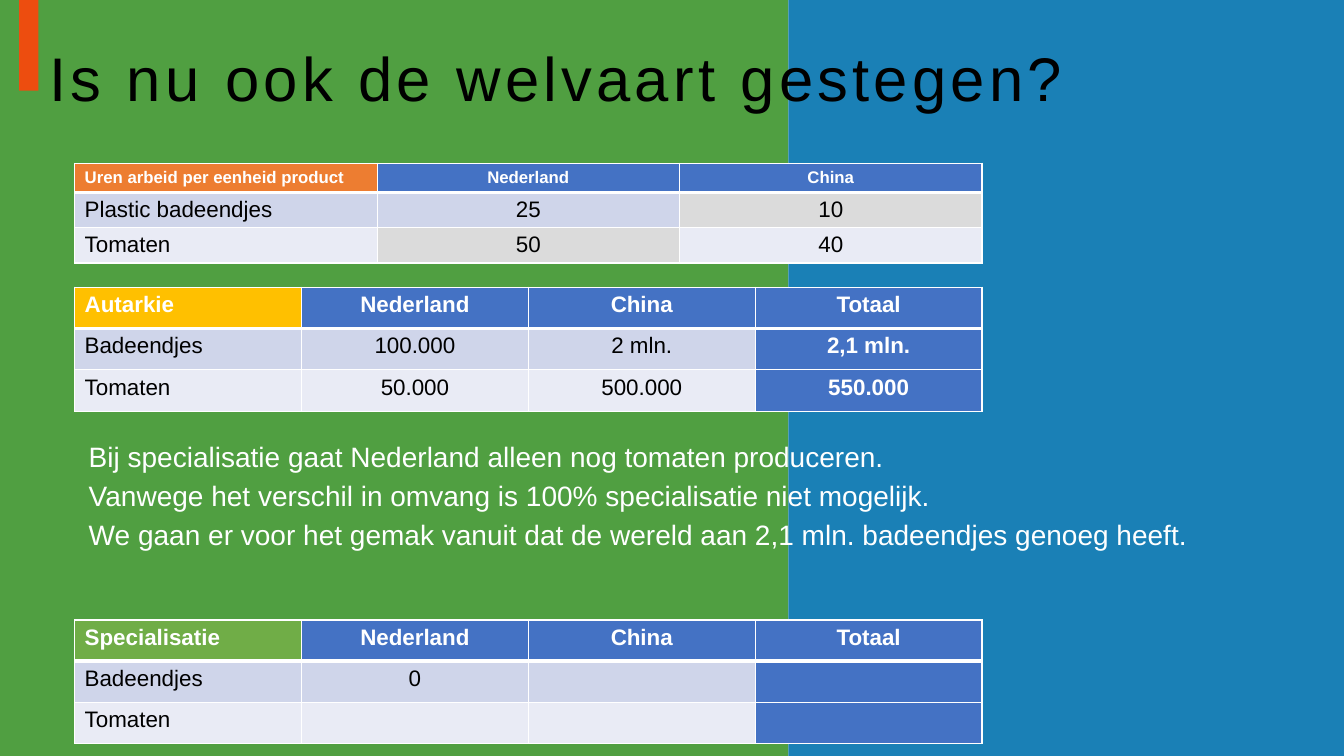
from dataclasses import dataclass

from lxml.etree import SubElement
from pptx import Presentation
from pptx.dml.color import RGBColor
from pptx.enum.shapes import MSO_SHAPE as SHAPE
from pptx.enum.text import MSO_ANCHOR as ANCHOR, MSO_AUTO_SIZE as AUTO, PP_ALIGN as ALIGN
from pptx.oxml.ns import qn
from pptx.util import Inches, Pt


@dataclass(frozen=True)
class Theme:
    font: str = "Arial"
    white: str = "FFFFFF"
    black: str = "000000"
    green: str = "258812"
    blue: str = "1A80B6"
    accent: str = "ED4D0F"
    header: str = "4472C4"
    bands: tuple = ("CFD5EA", "E9EBF5")
    lowest: str = "DBDBDB"
    orange: str = "ED7D31"
    yellow: str = "FFC000"
    lime: str = "70AD47"
    title_size: int = 44
    body_size: int = 20
    cell_size: int = 16
    small_size: int = 12


T = Theme()


def style_font(font, size, color, bold=False):
    for name, value in {"name": T.font, "size": Pt(size), "bold": bold}.items():
        setattr(font, name, value)
    font.color.rgb = RGBColor.from_string(color)


def place(shape, box):
    for name, value in zip(("left", "top", "width", "height"), box):
        setattr(shape, name, Inches(value))


# Background: two colour panels and the accent bar
def add_panel(s, box, color, opacity=100):
    sp = s.shapes.add_shape(SHAPE.RECTANGLE, *map(Inches, box))
    sp.shadow.inherit = False
    sp.line.fill.background()
    sp.fill.solid()
    sp.fill.fore_color.rgb = RGBColor.from_string(color)
    if opacity < 100:
        clr = next(sp.element.spPr.iter(qn("a:srgbClr")))
        SubElement(clr, qn("a:alpha"), val=str(opacity * 1000))


def add_background(s, box, split=7.82):
    left, top, width, height = box
    add_panel(s, (left, top, split, height), T.green, 80)
    add_panel(s, (left + split, top, width - split, height), T.blue)
    add_panel(s, (left + 0.19, top, 0.19, 0.9), T.accent)


# Title and body text
def fill_title(title, box, text):
    place(title, box)
    tf = title.text_frame
    formats = {"word_wrap": True, "auto_size": AUTO.NONE,
               "vertical_anchor": ANCHOR.TOP, "margin_top": Inches(0.09)}
    for name, value in formats.items():
        setattr(tf, name, value)
    p = tf.paragraphs[0]
    p.alignment, p.line_spacing = ALIGN.LEFT, 0.9
    r = p.add_run()
    r.text = text
    style_font(r.font, T.title_size, T.black)
    r.font.element.set("spc", "300") if hasattr(r.font, "element") else \
        next(p.runs[0].font._element.iter(qn("a:rPr"))).set("spc", "300")


def fill_body(body, box, lines):
    place(body, box)
    tf = body.text_frame
    tf.word_wrap, tf.auto_size = True, AUTO.NONE
    for i, line in enumerate(lines):
        p = tf.add_paragraph() if i else tf.paragraphs[0]
        r = p.add_run()
        r.text = line
        style_font(r.font, T.body_size, T.white)
        p.alignment = ALIGN.LEFT
        pPr = r.font._element.getparent().getparent().get_or_add_pPr()
        pPr.set("marL", "0")
        pPr.set("indent", "0")
        SubElement(pPr, qn("a:buNone"))


# Tables
def set_borders(cell, row):
    widths = {"L": 1, "R": 1, "T": 3 if row == 1 else 1, "B": 3 if row == 0 else 1}
    tcPr = cell._tc.get_or_add_tcPr()
    for side, width in widths.items():
        ln = SubElement(tcPr, qn(f"a:ln{side}"), w=str(Pt(width)))
        SubElement(SubElement(ln, qn("a:solidFill")), qn("a:srgbClr"), val=T.white)


def add_data_table(s, box, rows, corner, heights, head_size=T.cell_size,
                   total=False, marked=()):
    count = len(rows[0])
    table = s.shapes.add_table(len(rows), count, *map(Inches, box)).table
    for column in table.columns:
        column.width = Inches(box[2] / count)
    for i, (values, height) in enumerate(zip(rows, heights)):
        table.rows[i].height = Inches(height)
        for j, value in enumerate(values):
            strong = i == 0 or (total and j == count - 1)
            fill = T.header if strong else T.bands[(i - 1) % 2]
            if (i, j) == (0, 0):
                fill = corner
            elif (i, j) in marked:
                fill = T.lowest
            cell = table.cell(i, j)
            set_borders(cell, i)
            cell.fill.solid()
            cell.fill.fore_color.rgb = RGBColor.from_string(fill)
            p = cell.text_frame.paragraphs[0]
            p.alignment = ALIGN.CENTER if j else ALIGN.LEFT
            if value:
                r = p.add_run()
                r.text = value
                style_font(r.font, T.cell_size if i else head_size,
                           T.white if strong else T.black, strong)


def build_slide(prs):
    s = prs.slides.add_slide(prs.slide_layouts[1])
    title, body = s.shapes.title, s.placeholders[1]
    add_background(s, (0, 0, 13.33, 7.5))

    # Bring the text in front of the panels
    for sp in (body, title):
        sp.element.getparent().append(sp.element)
    fill_title(title, (0.39, 0.39, 12.61, 1.45), "Is nu ook de welvaart gestegen?")
    fill_body(body, (0.78, 4.31, 11.4, 1.71), [
        "Bij specialisatie gaat Nederland alleen nog tomaten produceren.",
        "Vanwege het verschil in omvang is 100% specialisatie niet mogelijk.",
        "We gaan er voor het gemak vanuit dat de wereld aan 2,1 mln. badeendjes genoeg heeft.",
    ])

    # Hours of labour, then output before and after specialisation
    left, width = 0.74, 9
    add_data_table(s, (left, 1.62, width, 0.99), [
        ("Uren arbeid per eenheid product", "Nederland", "China"),
        ("Plastic badeendjes", "25", "10"),
        ("Tomaten", "50", "40"),
    ], T.orange, (0.29, 0.35, 0.35), T.small_size, marked={(1, 2), (2, 1)})
    countries = ("Nederland", "China", "Totaal")
    outputs = [
        (2.85, T.yellow, "Autarkie",
         ("100.000", "2 mln.", "2,1 mln."), ("50.000", "500.000", "550.000")),
        (6.15, T.lime, "Specialisatie", ("0", "", ""), ("", "", "")),
    ]
    for top, corner, name, ducks, tomatoes in outputs:
        add_data_table(s, (left, top, width, 1.22), [
            (name, *countries), ("Badeendjes", *ducks), ("Tomaten", *tomatoes),
        ], corner, [0.41] * 3, total=True)


def main():
    prs = Presentation()
    prs.slide_width, prs.slide_height = Inches(13.33), Inches(7.5)
    build_slide(prs)
    prs.save("out.pptx")


if __name__ == "__main__":
    main()
